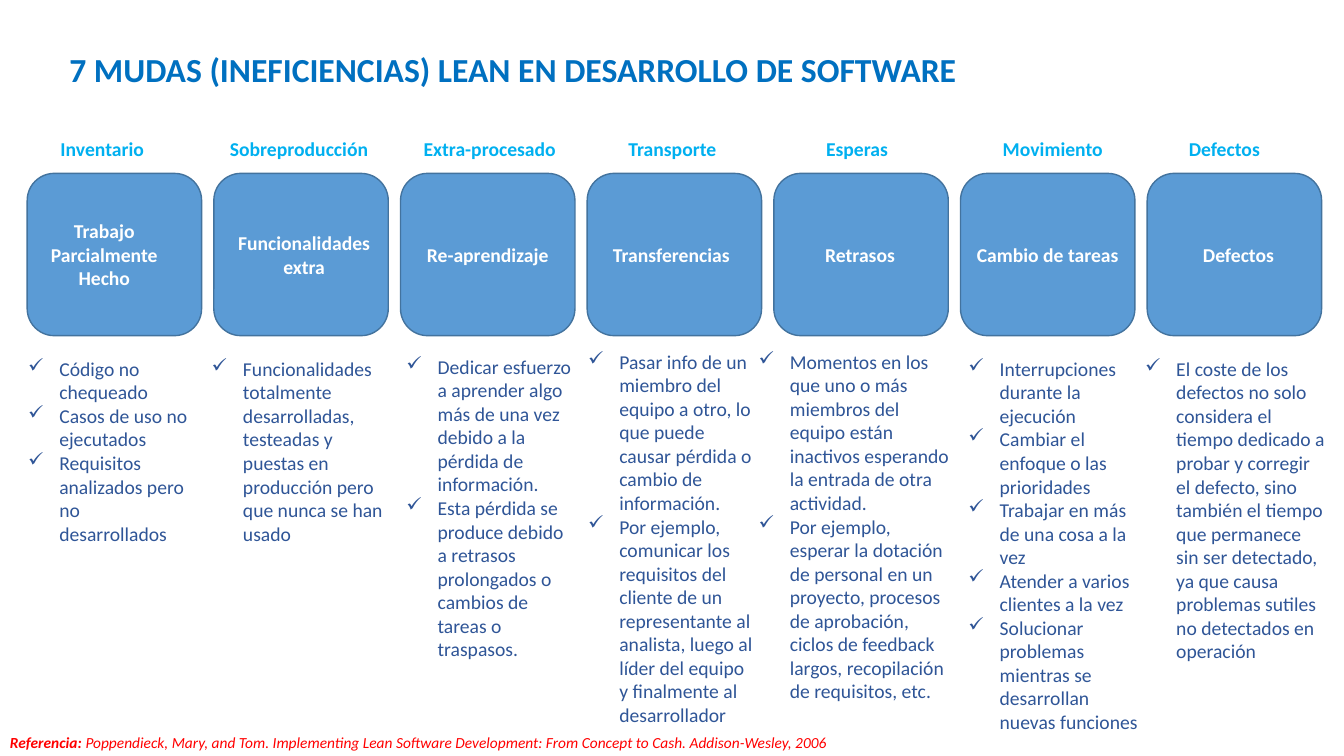
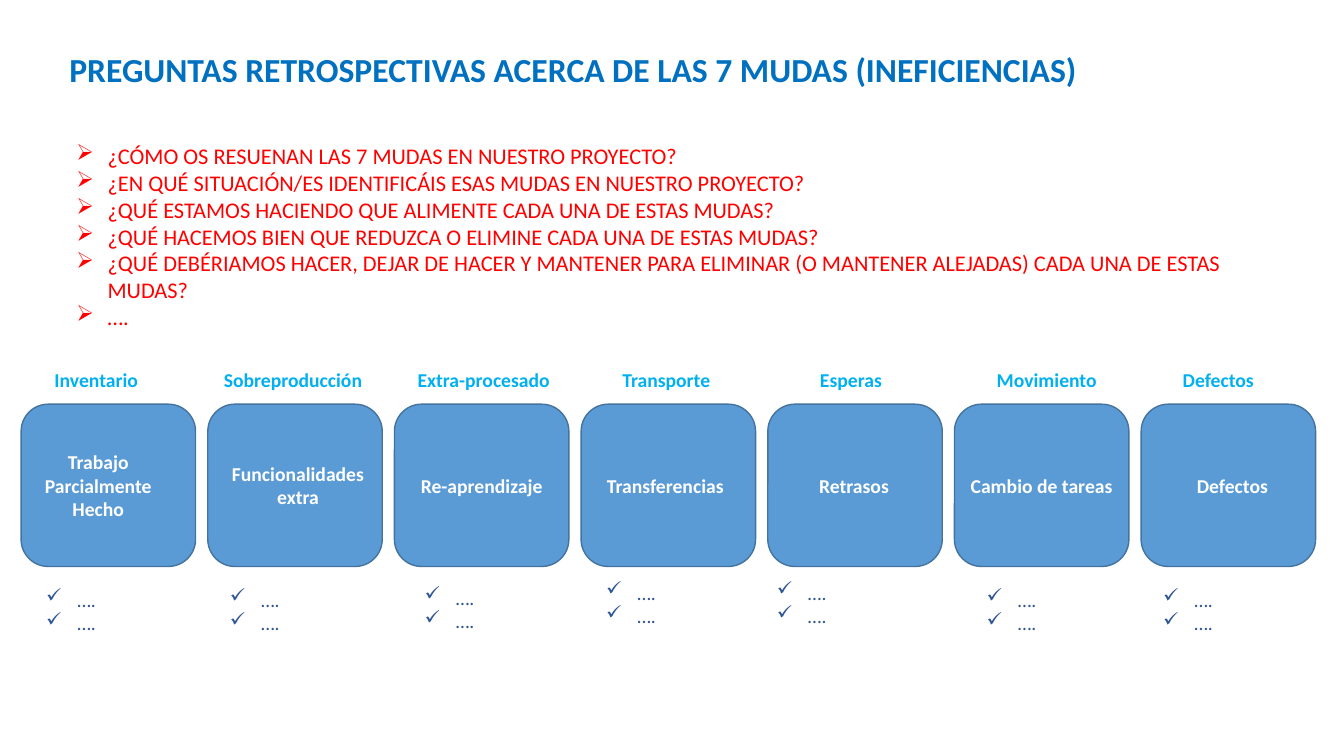
from dataclasses import dataclass

from lxml.etree import SubElement
from pptx import Presentation
from pptx.dml.color import RGBColor
from pptx.enum.shapes import MSO_SHAPE as Shape
from pptx.enum.text import MSO_ANCHOR as Anchor, PP_ALIGN as Align
from pptx.oxml.ns import qn
from pptx.util import Inches, Pt

FONT = "Calibri"
TITLE_BLUE = RGBColor(0x00, 0x70, 0xC0)
HEADING_BLUE = RGBColor(0x00, 0xB0, 0xF0)
NOTE_BLUE = RGBColor(0x2F, 0x55, 0x97)
BOX_FILL = RGBColor(0x5B, 0x9B, 0xD5)
BOX_LINE = RGBColor(0x43, 0x73, 0x9E)
WHITE = RGBColor(0xFF, 0xFF, 0xFF)
RED = RGBColor(0xFF, 0x00, 0x00)

SLIDE_W, SLIDE_H = 13.33, 7.5
COL = SLIDE_W / 7.2
BOX_W, BOX_H = 1.73, 1.61
HEADING_W, HEADING_H, HEADING_RISE = 2, 0.34, 0.41
NAME_W = 1.67
INDENT = 0.31


@dataclass(frozen=True)
class Muda:
    heading: str
    heading_shift: float
    name: str
    name_shift: float
    note_dx: float
    note_dy: float
    note_w: float
    notes: tuple[str, ...]


@dataclass(frozen=True)
class Board:
    left: float
    top: float
    note_shift: float


MUDAS = (
    Muda("Inventario", -0.12, "Trabajo Parcialmente Hecho", -0.1, -0.09, 1.77, 1.81, (
        "Código no chequeado",
        "Casos de uso no ejecutados",
        "Requisitos analizados pero no desarrollados")),
    Muda("Sobreproducción", -0.02, "Funcionalidades extra", 0.03, -0.12, 1.77, 1.91, (
        "Funcionalidades totalmente desarrolladas, testeadas y puestas en "
        "producción pero que nunca se han usado",)),
    Muda("Extra-procesado", 0.02, "Re-aprendizaje", 0, -0.04, 1.75, 1.86, (
        "Dedicar esfuerzo a aprender algo más de una vez debido a la pérdida "
        "de información.",
        "Esta pérdida se produce debido a retrasos prolongados o cambios de "
        "tareas o traspasos.")),
    Muda("Transporte", -0.02, "Transferencias", -0.03, -0.09, 1.7, 1.85, (
        "Pasar info de un miembro del equipo a otro, lo que puede causar "
        "pérdida o cambio de información.",
        "Por ejemplo, comunicar los requisitos del cliente de un representante "
        "al analista, luego al líder del equipo y finalmente al desarrollador")),
    Muda("Esperas", -0.04, "Retrasos", -0.01, -0.25, 1.7, 2.12, (
        "Momentos en los que uno o más miembros del equipo están inactivos "
        "esperando la entrada de otra actividad.",
        "Por ejemplo, esperar la dotación de personal en un proyecto, procesos "
        "de aprobación, ciclos de feedback largos, recopilación de requisitos, etc.")),
    Muda("Movimiento", 0.05, "Cambio de tareas", 0, -0.02, 1.77, 1.94, (
        "Interrupciones durante la ejecución",
        "Cambiar el enfoque o las prioridades",
        "Trabajar en más de una cosa a la vez",
        "Atender a varios clientes a la vez",
        "Solucionar problemas mientras se desarrollan nuevas funciones")),
    Muda("Defectos", -0.1, "Defectos", 0.04, -0.12, 1.77, 2, (
        "El coste de los defectos no solo considera el tiempo dedicado a probar "
        "y corregir el defecto, sino también el tiempo que permanece sin ser "
        "detectado, ya que causa problemas sutiles no detectados en operación",)),
)

QUESTIONS = (
    "¿CÓMO OS RESUENAN LAS 7 MUDAS EN NUESTRO PROYECTO?",
    "¿EN QUÉ SITUACIÓN/ES IDENTIFICÁIS ESAS MUDAS EN NUESTRO PROYECTO?",
    "¿QUÉ ESTAMOS HACIENDO QUE ALIMENTE CADA UNA DE ESTAS MUDAS?",
    "¿QUÉ HACEMOS BIEN QUE REDUZCA O ELIMINE CADA UNA DE ESTAS MUDAS?",
    "¿QUÉ DEBÉRIAMOS HACER, DEJAR DE HACER Y MANTENER PARA ELIMINAR "
    "(O MANTENER ALEJADAS) CADA UNA DE ESTAS MUDAS?",
    "….",
)
OPEN_NOTES = ("….", "….")


def add_bullet(p, char: str) -> None:
    pPr = p._p.get_or_add_pPr()
    pPr.set("marL", str(Inches(INDENT)))
    pPr.set("indent", str(-Inches(INDENT)))
    SubElement(pPr, qn("a:buChar")).set("char", char)


def add_text(s, lines, left: float, top: float, width: float, height: float, *,
             size: int = 14, color: RGBColor = NOTE_BLUE, bold: bool = False,
             italic: bool = False, align: Align = Align.LEFT,
             anchor: Anchor = Anchor.TOP, bullet: str = ""):
    sp = s.shapes.add_textbox(Inches(left), Inches(top), Inches(width), Inches(height))
    tf = sp.text_frame
    tf.word_wrap = True
    tf.vertical_anchor = anchor
    for i, line in enumerate(lines):
        p = tf.add_paragraph() if i else tf.paragraphs[0]
        if bullet:
            add_bullet(p, bullet)
        p.alignment = align
        for j, part in enumerate(line if isinstance(line, tuple) else (line,)):
            r = p.add_run()
            r.text = part
            r.font.name = FONT
            r.font.size = Pt(size)
            r.font.color.rgb = color
            r.font.bold = bold and j == 0
            r.font.italic = italic


def add_box(s, left: float, top: float) -> None:
    sp = s.shapes.add_shape(Shape.ROUNDED_RECTANGLE, Inches(left), Inches(top),
                            Inches(BOX_W), Inches(BOX_H))
    sp.shadow.inherit = False
    sp.fill.solid()
    sp.fill.fore_color.rgb = BOX_FILL
    sp.line.color.rgb = BOX_LINE
    sp.line.width = Pt(1)


def add_board(s, board: Board, notes: tuple[str, ...] = ()) -> None:
    for i, muda in enumerate(MUDAS):
        left = board.left + i * COL
        center = left + BOX_W / 2
        add_box(s, left, board.top)
        add_text(s, [muda.name], center + muda.name_shift - NAME_W / 2, board.top,
                 NAME_W, BOX_H, color=WHITE, bold=True, align=Align.CENTER,
                 anchor=Anchor.MIDDLE)
        add_text(s, [muda.heading], center + muda.heading_shift - HEADING_W / 2,
                 board.top - HEADING_RISE, HEADING_W, HEADING_H,
                 color=HEADING_BLUE, bold=True, align=Align.CENTER)
        note_top = board.top + muda.note_dy
        add_text(s, notes or muda.notes, left + muda.note_dx + board.note_shift,
                 note_top, muda.note_w, 0.57 if notes else SLIDE_H - note_top - 0.2,
                 bullet="✓")


def add_slide(prs, title: str):
    s = prs.slides.add_slide(prs.slide_layouts[6])
    add_text(s, [title], 0.59, 0.44, 11.03, 0.5, size=24, color=TITLE_BLUE, bold=True)
    return s


def main() -> None:
    prs = Presentation()
    prs.slide_width, prs.slide_height = Inches(SLIDE_W), Inches(SLIDE_H)

    s = add_slide(prs, "7 MUDAS (INEFICIENCIAS) LEAN EN DESARROLLO DE SOFTWARE")
    add_board(s, Board(0.27, 1.72, 0))
    reference = ("Referencia: ",
                 "Poppendieck, Mary, and Tom. Implementing Lean Software Development: "
                 "From Concept to Cash. Addison-Wesley, 2006")
    add_text(s, [reference], 0, 7.22, 11.3, 0.28, size=11, color=RED, bold=True,
             italic=True)

    s = add_slide(prs, "PREGUNTAS RETROSPECTIVAS ACERCA DE LAS 7 MUDAS (INEFICIENCIAS)")
    add_board(s, Board(0.21, 4.01, 0.24), OPEN_NOTES)
    add_text(s, QUESTIONS, 0.66, 1.36, 11.96, 1.99, size=16, color=RED, bullet="➢")

    prs.save("out.pptx")


if __name__ == "__main__":
    main()
